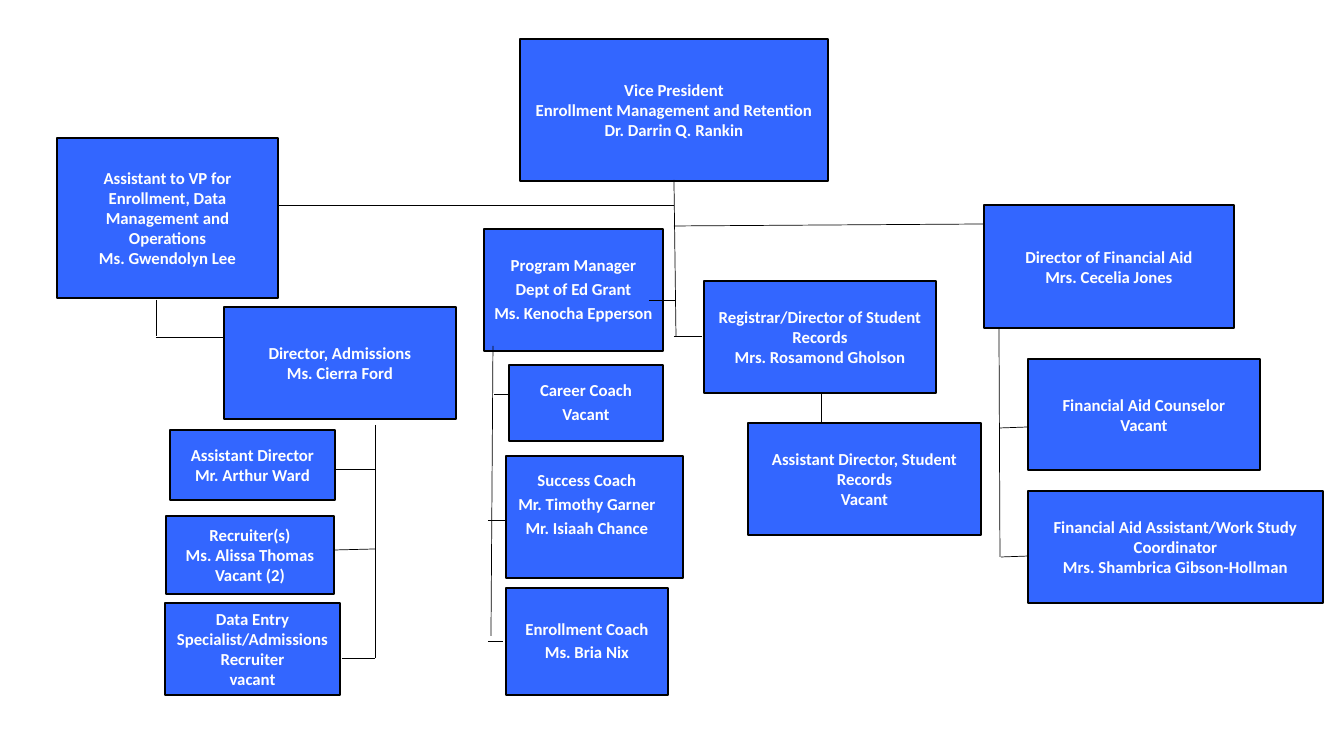
from dataclasses import dataclass

from lxml.etree import SubElement
from pptx import Presentation
from pptx.dml.color import RGBColor
from pptx.enum.shapes import MSO_CONNECTOR, MSO_SHAPE
from pptx.enum.text import MSO_ANCHOR, PP_ALIGN
from pptx.oxml.ns import qn
from pptx.util import Emu, Pt


@dataclass(frozen=True)
class Theme:
    box: RGBColor = RGBColor(0x33, 0x66, 0xFF)
    line: RGBColor = RGBColor(0x00, 0x00, 0x00)
    text: RGBColor = RGBColor(0xFF, 0xFF, 0xFF)
    font: str = "Calibri"
    size: Pt = Pt(12)
    border: Pt = Pt(1.5)
    link: Pt = Pt(0.5)


THEME = Theme()
EMU_PER_PX = 914400 / 100.8

# Offices: (left, top, width, height), lines of text
OFFICES = [
    ((520, 39, 308, 142), ["Vice President", "Enrollment Management and Retention",
                           "Dr. Darrin Q. Rankin"]),
    ((57, 138, 221, 160), ["Assistant to VP for Enrollment, Data Management and Operations",
                           "Ms. Gwendolyn Lee"]),
    ((224, 307, 232, 112), ["Director, Admissions", "Ms. Cierra Ford"]),
    ((170, 430, 165, 70), ["Assistant Director", "Mr. Arthur Ward"]),
    ((166, 516, 168, 78), ["Recruiter(s)", "Ms. Alissa Thomas", "Vacant (2)"]),
    ((165, 603, 175, 92), ["Data Entry Specialist/Admissions Recruiter", "vacant"]),
    ((704, 281, 232, 112), ["Registrar/Director of Student Records",
                            "Mrs. Rosamond Gholson"]),
    ((748, 423, 233, 112), ["Assistant Director, Student Records", "Vacant"]),
    ((984, 205, 250, 123), ["Director of Financial Aid", "Mrs. Cecelia Jones"]),
    ((1028, 359, 232, 111), ["Financial Aid Counselor", "Vacant"]),
    ((1028, 491, 295, 112), ["Financial Aid Assistant/Work Study Coordinator",
                             "Mrs. Shambrica Gibson-Hollman"]),
]

# Grant team: (left, top, width, height), (right, bottom) inset, lines of text
GRANT_TEAM = [
    ((484, 229, 179, 122), (1, 1), ["Program Manager", "Dept of Ed Grant",
                                    "Ms. Kenocha Epperson"]),
    ((509, 365, 154, 76), (1, 1), ["Career Coach", "Vacant"]),
    ((506, 456, 177, 122), (16, 25), ["Success Coach", "Mr. Timothy Garner",
                                      "Mr. Isiaah Chance"]),
    ((506, 588, 162, 107), (1, 1), ["Enrollment Coach", "Ms. Bria Nix"]),
]

# Reporting lines: start x, start y, end x, end y
LINKS = [
    # Vice President
    (674, 180, 676, 336), (674, 205, 277, 205), (674, 226, 984, 224),
    (649, 300, 676, 300), (674, 336, 702, 336),
    # Admissions
    (156, 300, 156, 336), (156, 337, 223, 337), (375, 425, 375, 658),
    (334, 469, 375, 469), (334, 550, 375, 549), (342, 658, 375, 658),
    # Grant team
    (493, 346, 491, 636), (494, 394, 509, 394), (488, 520, 506, 520),
    (488, 641, 503, 641),
    # Student records
    (821, 394, 821, 423),
    # Financial aid
    (999, 328, 1000, 557), (1000, 428, 1028, 427), (1001, 557, 1029, 556),
]


def px(value):
    return Emu(round(value * EMU_PER_PX))


def set_all(target, values):
    for name, value in values.items():
        setattr(target, name, value)


def add_box(slide, bounds, lines, insets=(10, 5, 10, 5), spacing=None):
    """Add a bordered box with one centred paragraph per line."""
    shape = slide.shapes.add_shape(MSO_SHAPE.RECTANGLE, *map(px, bounds))
    shape.shadow.inherit = False
    shape.fill.solid()
    shape.fill.fore_color.rgb = THEME.box
    shape.line.color.rgb = THEME.line
    shape.line.width = THEME.border

    frame = shape.text_frame
    left, top, right, bottom = map(px, insets)
    set_all(frame, {"word_wrap": True, "vertical_anchor": MSO_ANCHOR.MIDDLE,
                    "margin_left": left, "margin_top": top,
                    "margin_right": right, "margin_bottom": bottom})
    for index, line in enumerate(lines):
        paragraph = frame.add_paragraph() if index else frame.paragraphs[0]
        set_all(paragraph, {"alignment": PP_ALIGN.CENTER, **(spacing or {})})
        run = paragraph.add_run()
        run.text = line
        set_all(run.font, {"name": THEME.font, "size": THEME.size, "bold": True})
        run.font.color.rgb = THEME.text


def add_link(slide, points):
    """Add a thin reporting line without a shadow."""
    link = slide.shapes.add_connector(MSO_CONNECTOR.STRAIGHT, *map(px, points))
    link.line.color.rgb = THEME.line
    link.line.width = THEME.link
    SubElement(link._element.spPr, qn("a:effectLst"))


def main():
    presentation = Presentation()
    set_all(presentation, {"slide_width": px(1344), "slide_height": px(756)})
    slide = presentation.slides.add_slide(presentation.slide_layouts[6])

    for bounds, lines in OFFICES:
        add_box(slide, bounds, lines)

    # The grant team has looser lines and narrow insets
    loose = {"line_spacing": 0.9, "space_after": Pt(4)}
    for bounds, (right, bottom), lines in GRANT_TEAM:
        add_box(slide, bounds, lines, (1, 1, right, bottom), loose)

    for points in LINKS:
        add_link(slide, points)

    presentation.save("out.pptx")


if __name__ == "__main__":
    main()
